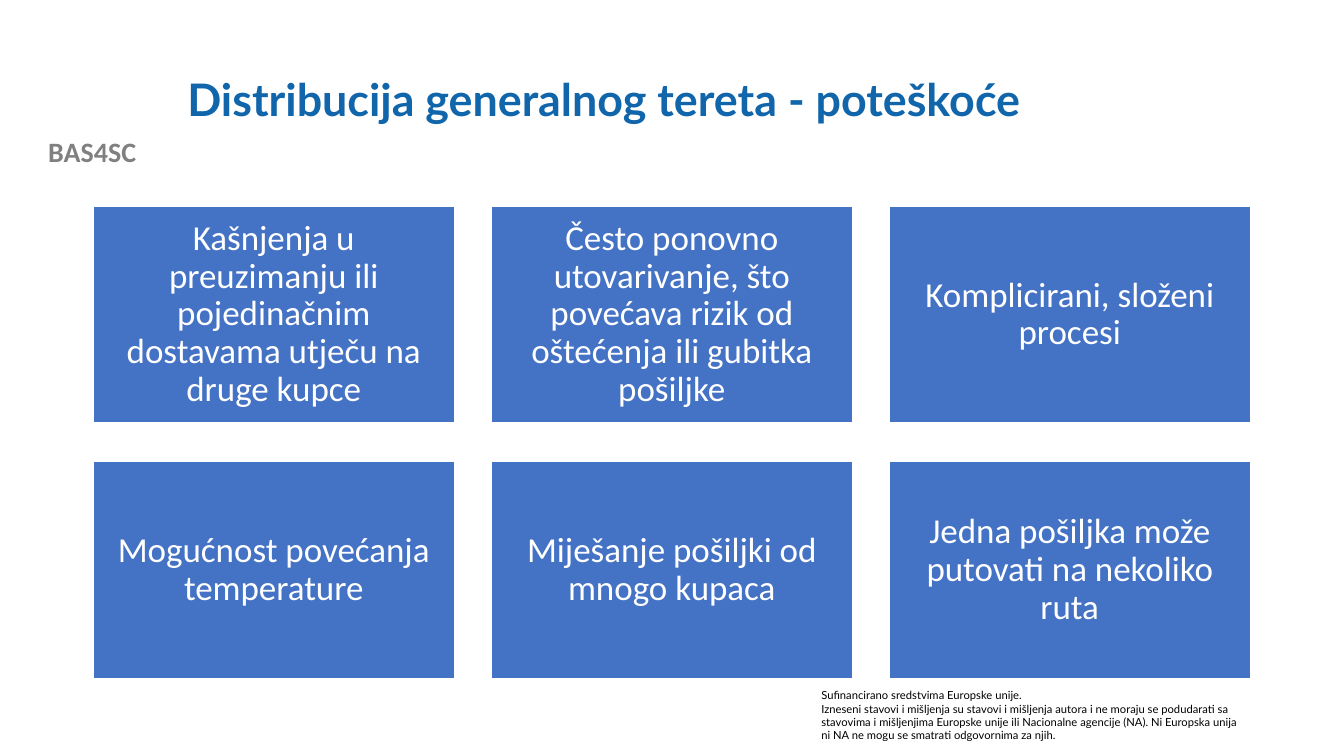
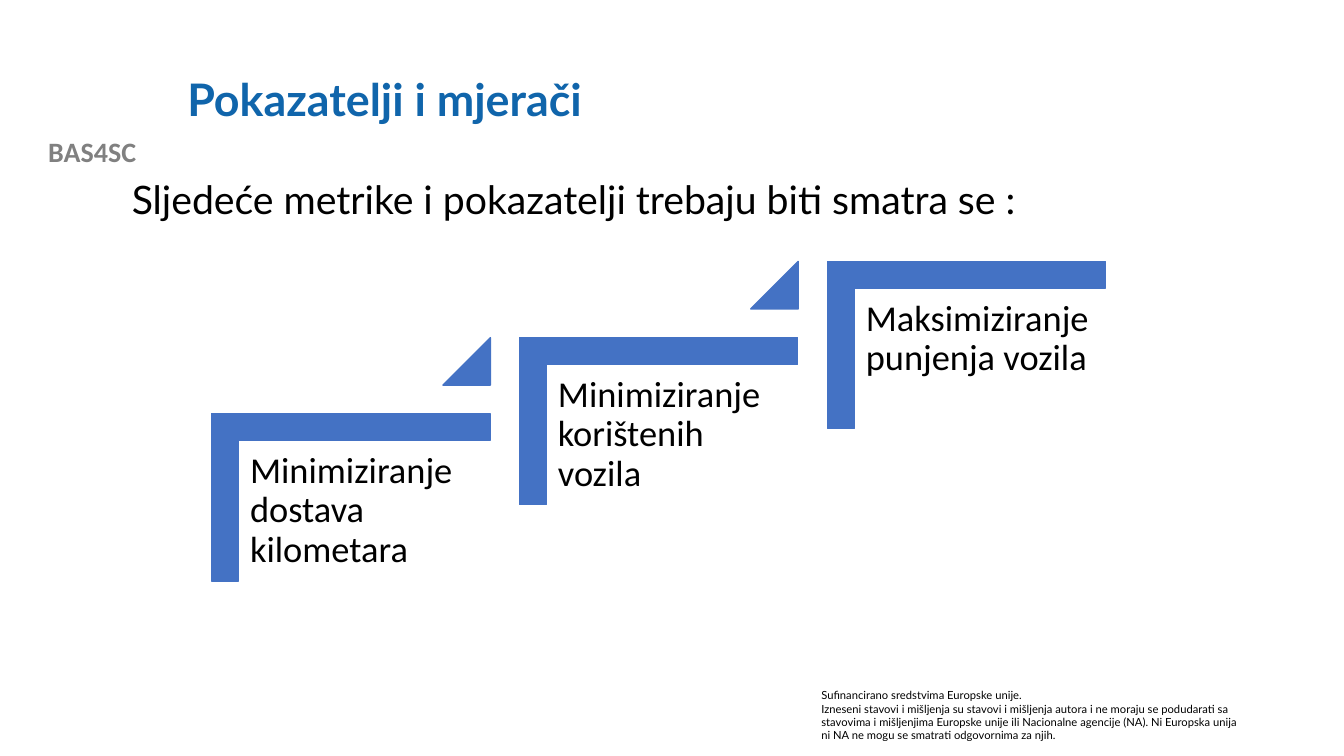
"""Build two slides on general cargo distribution: difficulties and metrics."""
from dataclasses import dataclass

from lxml.etree import SubElement
from pptx import Presentation
from pptx.dml.color import RGBColor
from pptx.enum.shapes import MSO_SHAPE as Preset
from pptx.enum.text import MSO_ANCHOR as Anchor, PP_ALIGN as Align
from pptx.oxml.ns import qn
from pptx.shapes.autoshape import Shape
from pptx.slide import Slide
from pptx.util import Pt

COLORS = {
    "title": "1065AB",
    "project": "808080",
    "bullet": "015BA6",
    "block": "4472C4",
    "white": "FFFFFF",
    "black": "000000",
}
DISCLAIMER = [
    "Sufinancirano sredstvima Europske unije.",
    "Izneseni stavovi i mišljenja su stavovi i mišljenja autora i ne moraju se podudarati sa "
    "stavovima i mišljenjima Europske unije ili Nacionalne agencije (NA). Ni Europska unija "
    "ni NA ne mogu se smatrati odgovornima za njih.",
]
DIFFICULTIES = [
    "Kašnjenja u preuzimanju ili pojedinačnim dostavama utječu na druge kupce",
    "Često ponovno utovarivanje, što povećava rizik od oštećenja ili gubitka pošiljke",
    "Komplicirani, složeni procesi",
    "Mogućnost povećanja temperature",
    "Miješanje pošiljki od mnogo kupaca",
    "Jedna pošiljka može putovati na nekoliko ruta",
]
METRICS = [
    "Minimiziranje dostava kilometara",
    "Minimiziranje korištenih vozila",
    "Maksimiziranje punjenja vozila",
]


@dataclass(frozen=True)
class Box:
    left: float
    top: float
    width: float
    height: float

    def moved(self, right: float, down: float) -> "Box":
        return Box(self.left + right, self.top + down, self.width, self.height)

    def lengths(self) -> tuple[Pt, Pt, Pt, Pt]:
        return Pt(self.left), Pt(self.top), Pt(self.width), Pt(self.height)


@dataclass(frozen=True)
class Style:
    size: float
    font: str
    color: str
    bold: bool = False
    align: Align = Align.LEFT
    anchor: Anchor = Anchor.TOP
    spacing: float = 0.9
    inset: tuple[float, float] = (7.2, 3.6)


TITLE = Style(32, "Lato", "title", bold=True, anchor=Anchor.MIDDLE)
PROJECT = Style(20, "Calibri", "project", bold=True, align=Align.CENTER, spacing=1)
FOOTER = Style(8, "Lato", "black", spacing=1)
INTRO = Style(28, "Lato", "black")
DIFFICULTY = Style(25, "Calibri", "white", align=Align.CENTER, anchor=Anchor.MIDDLE,
                   inset=(7.5, 7.5))
METRIC = Style(26, "Calibri", "black", inset=(7.8, 7.8))

CARD = Box(66.4, 147.2, 258.3, 155)
CARD_GAP = 26
CARD_COLUMNS = 3
STEP_CORNER = Box(190.8, 255.8, 119.5, 198.8)
STEP_LABEL = Box(170.8, 315.2, 179.4, 157.3)
STEP_TRIANGLE = Box(316.4, 241.2, 33.9, 33.9)
STEP_RIGHT, STEP_UP = 219.9, 54.4
STEP_THICKNESS = 0.161


def write(shape: Shape, texts: list[str], style: Style) -> None:
    frame = shape.text_frame
    frame.word_wrap = True
    frame.vertical_anchor = style.anchor
    frame.margin_left = frame.margin_right = Pt(style.inset[0])
    frame.margin_top = frame.margin_bottom = Pt(style.inset[1])
    frame.text = "\n".join(texts)
    for paragraph in frame.paragraphs:
        paragraph.alignment = style.align
        paragraph.line_spacing = style.spacing
        font = paragraph.font
        font.size, font.name, font.bold = Pt(style.size), style.font, style.bold
        font.color.rgb = RGBColor.from_string(COLORS[style.color])


def add_text(slide: Slide, box: Box, texts: list[str], style: Style) -> Shape:
    label = slide.shapes.add_textbox(*box.lengths())
    write(label, texts, style)
    return label


def add_block(slide: Slide, preset: Preset, box: Box, outline: str) -> Shape:
    block = slide.shapes.add_shape(preset, *box.lengths())
    block.shadow.inherit = False
    block.fill.solid()
    block.fill.fore_color.rgb = RGBColor.from_string(COLORS["block"])
    block.line.color.rgb = RGBColor.from_string(COLORS[outline])
    block.line.width = Pt(1)
    return block


def add_intro(slide: Slide, text: str) -> None:
    intro = slide.shapes.add_textbox(*Box(87.1, 125.3, 828, 342.7).lengths())
    properties = intro.text_frame.paragraphs[0]._p.get_or_add_pPr()
    properties.set("marL", str(Pt(18)))
    properties.set("indent", str(Pt(-18)))
    bullet_color = SubElement(properties, qn("a:buClr"))
    SubElement(bullet_color, qn("a:srgbClr"), val=COLORS["bullet"])
    SubElement(properties, qn("a:buFont"), typeface="Arial")
    SubElement(properties, qn("a:buChar"), char="•")
    write(intro, [text], INTRO)


def add_slide(deck: Presentation, title: str) -> Slide:
    slide = deck.slides.add_slide(deck.slide_layouts[6])
    add_text(slide, Box(0, 92.2, 131.8, 31.7), ["BAS4SC"], PROJECT)
    add_text(slide, Box(579.6, 488.2, 314.6, 46.1), DISCLAIMER, FOOTER)
    add_text(slide, Box(126.7, 28.8, 767.5, 87.8), [title], TITLE)
    return slide


def add_difficulties(slide: Slide) -> None:
    for index, text in enumerate(DIFFICULTIES):
        row, column = divmod(index, CARD_COLUMNS)
        place = CARD.moved(column * (CARD.width + CARD_GAP), row * (CARD.height + CARD_GAP + 1.4))
        write(add_block(slide, Preset.RECTANGLE, place, "white"), [text], DIFFICULTY)


def add_metrics(slide: Slide) -> None:
    for index, text in enumerate(METRICS):
        shift = index * STEP_RIGHT, -index * STEP_UP
        corner = add_block(slide, Preset.CORNER, STEP_CORNER.moved(*shift), "block")
        corner.rotation = 90
        corner.adjustments[0] = corner.adjustments[1] = STEP_THICKNESS
        add_text(slide, STEP_LABEL.moved(*shift), [text], METRIC)
        if index < len(METRICS) - 1:
            triangle = add_block(slide, Preset.ISOSCELES_TRIANGLE,
                                 STEP_TRIANGLE.moved(*shift), "block")
            triangle.adjustments[0] = 1


def main() -> None:
    deck = Presentation()
    deck.slide_width, deck.slide_height = Pt(960), Pt(540)
    add_difficulties(add_slide(deck, "Distribucija generalnog tereta - poteškoće"))
    metrics = add_slide(deck, "Pokazatelji i mjerači")
    add_intro(metrics, "Sljedeće metrike i pokazatelji trebaju biti smatra se :")
    add_metrics(metrics)
    deck.save("out.pptx")


if __name__ == "__main__":
    main()
